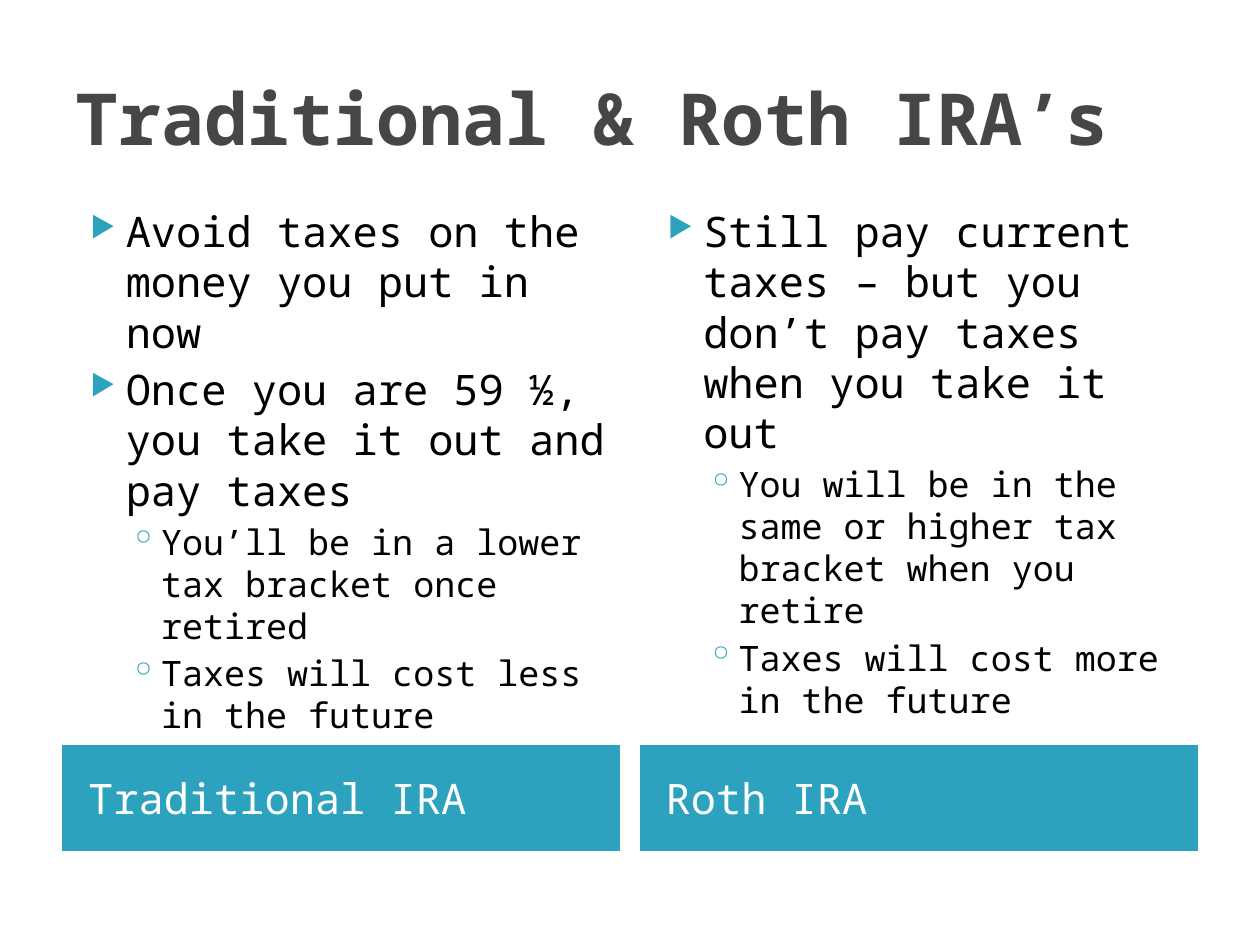
from dataclasses import dataclass

from lxml import etree
from pptx import Presentation
from pptx import util as u
from pptx.dml.color import RGBColor
from pptx.enum import shapes, text
from pptx.oxml import ns

FONT = "Noto Sans Mono"
ACCENT, TITLE_COLOR, BLACK, WHITE = "2DA2BF", "464646", "000000", "FFFFFF"
LEFT, COLUMN_WIDTH, COLUMN_STEP = 36, 318, 330


@dataclass(frozen=True)
class Level:
    size: float
    indent: float
    hanging: float
    space_before: float
    bullet: str
    bullet_percent: int


@dataclass(frozen=True)
class Column:
    heading: str
    points: tuple[tuple[int, str], ...]


LEVELS = (
    Level(24, 28.8, 20.16, 4, "▶", 68),
    Level(20, 48.96, 18, 3.2, "◦", 100),
)

COLUMNS = (
    Column("Traditional IRA", (
        (0, "Avoid taxes on the money you put in now"),
        (0, "Once you are 59 ½, you take it out and pay taxes"),
        (1, "You’ll be in a lower tax bracket once retired"),
        (1, "Taxes will cost less in the future"),
    )),
    Column("Roth IRA", (
        (0, "Still pay current taxes – but you don’t pay taxes when you take it out"),
        (1, "You will be in the same or higher tax bracket when you retire"),
        (1, "Taxes will cost more in the future"),
    )),
)


def color(value: str) -> RGBColor:
    return RGBColor.from_string(value)


def add_run(paragraph, content: str, size: float, fill: str, bold: bool = False) -> None:
    run = paragraph.add_run()
    run.text = content
    run.font.name = FONT
    run.font.size = u.Pt(size)
    run.font.bold = bold
    run.font.color.rgb = color(fill)


def add_bullet(paragraph, level: Level) -> None:
    properties = paragraph._p.get_or_add_pPr()
    properties.set("marL", str(u.Pt(level.indent)))
    properties.set("indent", str(-u.Pt(level.hanging)))
    bullet_color = etree.SubElement(properties, ns.qn("a:buClr"))
    etree.SubElement(bullet_color, ns.qn("a:srgbClr"), val=ACCENT)
    etree.SubElement(properties, ns.qn("a:buSzPct"), val=str(level.bullet_percent * 1000))
    etree.SubElement(properties, ns.qn("a:buChar"), char=level.bullet)


def add_title(slide, content: str) -> None:
    title = slide.shapes.title
    title.left, title.top = u.Pt(LEFT), u.Pt(21.6)
    title.width, title.height = u.Pt(648), u.Pt(90)
    title.text_frame.vertical_anchor = text.MSO_ANCHOR.MIDDLE
    paragraph = title.text_frame.paragraphs[0]
    paragraph.alignment = text.PP_ALIGN.LEFT
    add_run(paragraph, content, 41, TITLE_COLOR, bold=True)


def add_heading(slide, left: float, content: str) -> None:
    shape = slide.shapes.add_shape(
        shapes.MSO_SHAPE.RECTANGLE, u.Pt(left), u.Pt(426), u.Pt(COLUMN_WIDTH), u.Pt(60))
    shape.shadow.inherit = False
    shape.fill.solid()
    shape.fill.fore_color.rgb = color(ACCENT)
    shape.line.color.rgb = color(ACCENT)
    shape.line.width = u.Pt(0.75)
    frame = shape.text_frame
    frame.margin_left = u.Pt(14.4)
    frame.vertical_anchor = text.MSO_ANCHOR.MIDDLE
    paragraph = frame.paragraphs[0]
    paragraph.alignment = text.PP_ALIGN.LEFT
    add_run(paragraph, content, 24, WHITE)


def add_points(slide, left: float, points: tuple[tuple[int, str], ...]) -> None:
    box = slide.shapes.add_textbox(
        u.Pt(left), u.Pt(113.76), u.Pt(COLUMN_WIDTH), u.Pt(310.32))
    frame = box.text_frame
    frame.word_wrap = True
    for index, (depth, content) in enumerate(points):
        level = LEVELS[depth]
        paragraph = frame.add_paragraph() if index else frame.paragraphs[0]
        paragraph.level = depth
        if index:
            paragraph.space_before = u.Pt(level.space_before)
        add_bullet(paragraph, level)
        add_run(paragraph, content, level.size, BLACK)


def main() -> None:
    presentation = Presentation()
    presentation.slide_width, presentation.slide_height = u.Pt(720), u.Pt(540)
    slide = presentation.slides.add_slide(presentation.slide_layouts[5])
    add_title(slide, "Traditional & Roth IRA’s")

    # Two columns: points above, heading bar below
    for index, column in enumerate(COLUMNS):
        left = LEFT + index * COLUMN_STEP
        add_heading(slide, left, column.heading)
        add_points(slide, left, column.points)

    presentation.save("out.pptx")


if __name__ == "__main__":
    main()
